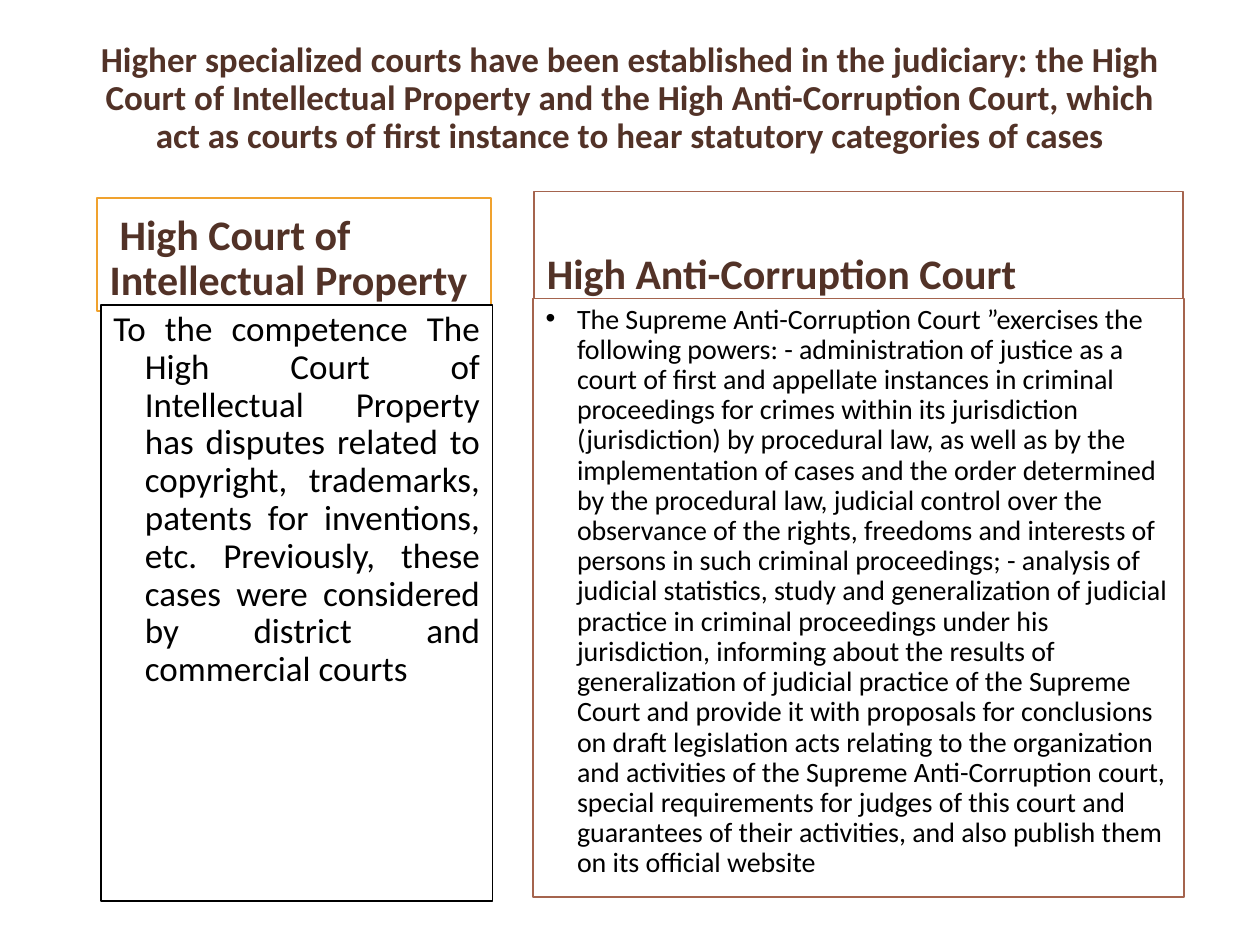
from pptx import Presentation
from pptx.dml.color import RGBColor
from pptx.enum.text import MSO_ANCHOR, MSO_AUTO_SIZE, PP_ALIGN
from pptx.oxml.ns import qn
from pptx.util import Inches, Pt
from lxml import etree

LEFT, CENTER, JUSTIFY = PP_ALIGN.LEFT, PP_ALIGN.CENTER, PP_ALIGN.JUSTIFY
TOP, MIDDLE, BOTTOM = MSO_ANCHOR.TOP, MSO_ANCHOR.MIDDLE, MSO_ANCHOR.BOTTOM
NO_AUTOFIT = MSO_AUTO_SIZE.NONE

WHITE = RGBColor(0xFF, 0xFF, 0xFF)
BLACK = RGBColor(0, 0, 0)
BROWN = RGBColor(0x52, 0x32, 0x27)
ORANGE = RGBColor(0xF0, 0xA2, 0x2E)
RUST = RGBColor(0xA5, 0x64, 0x4E)
FONT = "Calibri"
COMPARISON_LAYOUT = 4
HANGING = 0.25

TITLE = (
    "Higher specialized courts have been established in the judiciary: "
    "the High Court of Intellectual Property and the High Anti-Corruption Court, "
    "which act as courts of first instance to hear statutory categories of cases"
)
COURTS = [
    {
        "heading": "High Court of Intellectual Property",
        "heading_box": (0.77, 1.57, 3.13, 0.9),
        "heading_line": ORANGE,
        "heading_indent": 0.08,
        "body": [
            "To the competence The High Court of Intellectual Property has disputes "
            "related to copyright, trademarks, patents for inventions, etc.",
            "Previously, these cases were considered by district and commercial courts",
        ],
        "body_box": (0.8, 2.42, 3.11, 4.73),
        "body_line": BLACK,
        "body_size": 20,
        "alignment": JUSTIFY,
        "bullet": False,
    },
    {
        "heading": "High Anti-Corruption Court",
        "heading_box": (4.24, 1.52, 5.15, 0.9),
        "heading_line": RUST,
        "heading_indent": 0,
        "body": [
            "The Supreme Anti-Corruption Court ”exercises the following powers:",
            "- administration of justice as a court of first and appellate instances in "
            "criminal proceedings for crimes within its jurisdiction (jurisdiction) by "
            "procedural law, as well as by the implementation of cases and the order "
            "determined by the procedural law, judicial control over the observance of "
            "the rights, freedoms and interests of persons in such criminal proceedings;",
            "- analysis of judicial statistics, study and generalization of judicial "
            "practice in criminal proceedings under his jurisdiction, informing about the "
            "results of generalization of judicial practice of the Supreme Court and "
            "provide it with proposals for conclusions on draft legislation acts relating "
            "to the organization and activities of the Supreme Anti-Corruption court, "
            "special requirements for judges of this court and guarantees of their "
            "activities, and also publish them on its official website",
        ],
        "body_box": (4.23, 2.37, 5.17, 4.75),
        "body_line": RUST,
        "body_size": 16,
        "alignment": LEFT,
        "bullet": True,
    },
]


def fill_placeholder(shape, box, text, size, color, bold, alignment, anchor):
    shape.left, shape.top, shape.width, shape.height = map(Inches, box)
    frame = shape.text_frame
    frame.text = text
    frame.word_wrap = True
    frame.auto_size = NO_AUTOFIT
    frame.vertical_anchor = anchor
    paragraph = frame.paragraphs[0]
    paragraph.alignment = alignment
    paragraph.line_spacing = 0.9
    paragraph.space_before = Pt(0)
    font = paragraph.runs[0].font
    font.name, font.size, font.bold = FONT, Pt(size), bold
    font.color.rgb = color
    return paragraph


def frame_box(shape, line_color):
    shape.fill.solid()
    shape.fill.fore_color.rgb = WHITE
    shape.line.color.rgb = line_color
    shape.line.width = Pt(1)


def set_indent(paragraph, margin, first_line, bullet):
    properties = paragraph._p.get_or_add_pPr()
    properties.set("marL", str(Inches(margin)))
    properties.set("indent", str(Inches(first_line)))
    if bullet:
        etree.SubElement(properties, qn("a:buChar")).set("char", "•")
    else:
        etree.SubElement(properties, qn("a:buNone"))


def main():
    presentation = Presentation()
    presentation.slide_width, presentation.slide_height = Inches(10), Inches(7.5)
    slide = presentation.slides.add_slide(presentation.slide_layouts[COMPARISON_LAYOUT])

    title = slide.shapes.title
    fill_placeholder(title, (0.69, 0.4, 8.62, 1.12), TITLE, 20, BROWN, True, CENTER, MIDDLE)
    title.text_frame.margin_bottom = Inches(0.4)

    for index, court in enumerate(COURTS):
        heading = slide.placeholders[2 * index + 1]
        frame_box(heading, court["heading_line"])
        paragraph = fill_placeholder(
            heading, court["heading_box"], court["heading"], 24, BROWN, True, LEFT, BOTTOM
        )
        set_indent(paragraph, 0, court["heading_indent"], False)

        body = slide.placeholders[2 * index + 2]
        frame_box(body, court["body_line"])
        paragraph = fill_placeholder(
            body, court["body_box"], " ".join(court["body"]), court["body_size"], BLACK,
            False, court["alignment"], TOP,
        )
        set_indent(paragraph, HANGING, -HANGING, court["bullet"])

    presentation.save("out.pptx")


if __name__ == "__main__":
    main()
